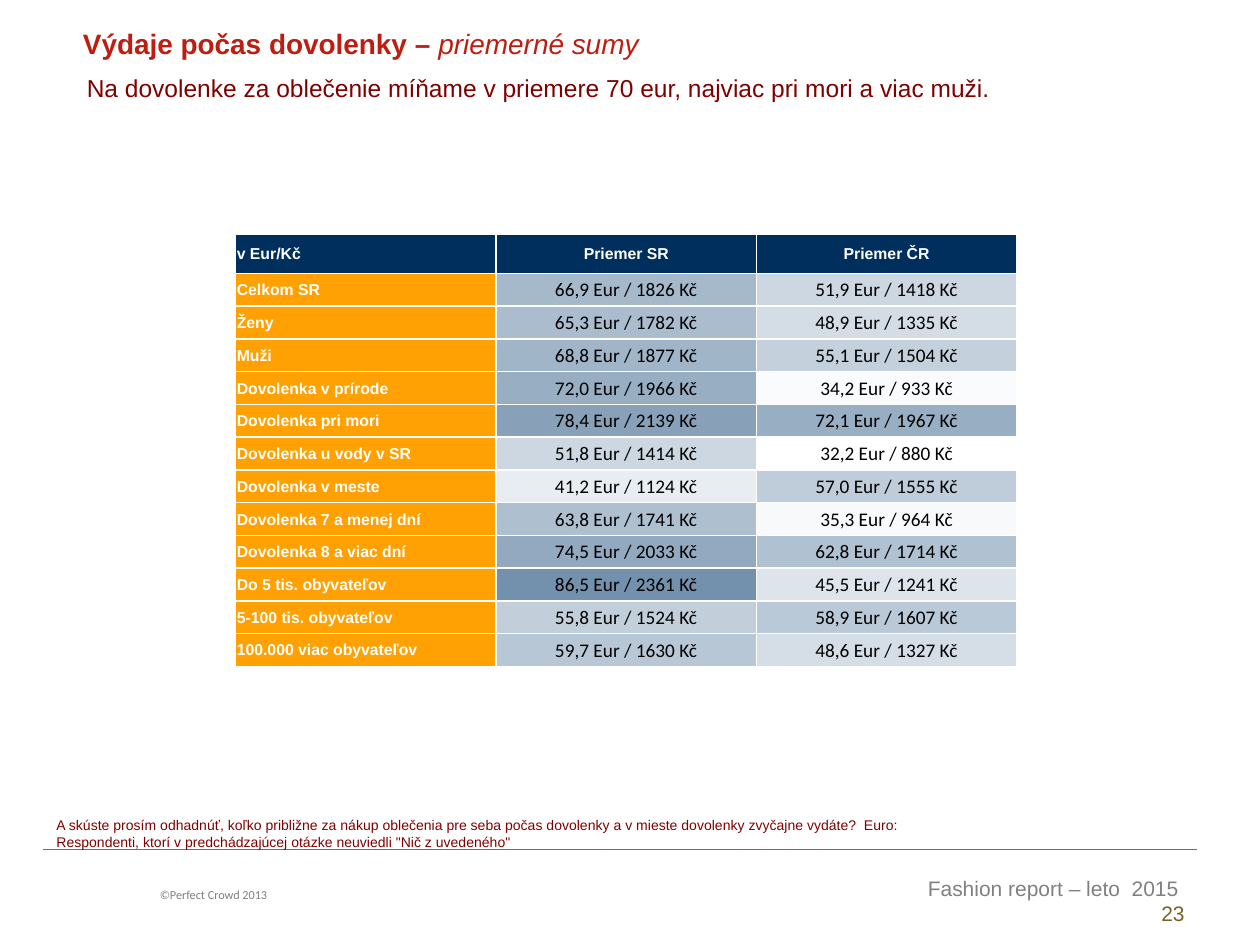
from dataclasses import dataclass

from lxml.etree import SubElement
from pptx import Presentation
from pptx.dml.color import RGBColor
from pptx.enum.shapes import MSO_CONNECTOR as Connector
from pptx.enum.text import MSO_ANCHOR as Anchor, PP_ALIGN as Align
from pptx.oxml.ns import qn
from pptx.util import Inches, Pt


@dataclass(frozen=True)
class Theme:
    heading: str = "BE1E11"
    body: str = "800000"
    muted: str = "808080"
    page: str = "756522"
    rule: str = "BF4C48"
    header: str = "002F5E"
    label: str = "FFA102"
    low: str = "FFFFFF"
    high: str = "7391AD"
    white: str = "FFFFFF"
    black: str = "000000"
    sans: str = "Arial"
    figures: str = "Calibri"
    title_size: int = 16
    message_size: int = 14
    footer_size: int = 12
    value_size: int = 11
    label_size: int = 9
    note_size: int = 8
    copyright_size: int = 7


THEME = Theme()
SLIDE_WIDTH, SLIDE_HEIGHT = Inches(10), Inches(7.5)
GRID_COLUMNS, GRID_ROWS = 100, 75

HEADINGS = ["v Eur/Kč", "Priemer SR", "Priemer ČR"]
# Group, then (euros, crowns) for SR and for ČR
SPENDING = [
    ("Celkom SR", (66.9, 1826), (51.9, 1418)),
    ("Ženy", (65.3, 1782), (48.9, 1335)),
    ("Muži", (68.8, 1877), (55.1, 1504)),
    ("Dovolenka v prírode", (72.0, 1966), (34.2, 933)),
    ("Dovolenka pri mori", (78.4, 2139), (72.1, 1967)),
    ("Dovolenka u vody v SR", (51.8, 1414), (32.2, 880)),
    ("Dovolenka v meste", (41.2, 1124), (57.0, 1555)),
    ("Dovolenka 7 a menej dní", (63.8, 1741), (35.3, 964)),
    ("Dovolenka 8 a viac dní", (74.5, 2033), (62.8, 1714)),
    ("Do 5 tis. obyvateľov", (86.5, 2361), (45.5, 1241)),
    ("5-100 tis. obyvateľov", (55.8, 1524), (58.9, 1607)),
    ("100.000 viac obyvateľov", (59.7, 1630), (48.6, 1327)),
]


def across(columns):
    return round(SLIDE_WIDTH * columns / GRID_COLUMNS)


def down(rows):
    return round(SLIDE_HEIGHT * rows / GRID_ROWS)


def area(left, top, width, height):
    return across(left), down(top), across(width), down(height)


def write(paragraph, text, *, size, color, font=THEME.sans, bold=False,
          italic=False, align=Align.LEFT):
    """Add one formatted run to a paragraph."""
    paragraph.alignment = align
    run = paragraph.add_run()
    run.text = text
    run.font.name = font
    run.font.size = Pt(size)
    run.font.bold = bold
    run.font.italic = italic
    run.font.color.rgb = RGBColor.from_string(color)


def add_text_frame(slide, *place):
    frame = slide.shapes.add_textbox(*area(*place)).text_frame
    frame.word_wrap = True
    return frame


def add_heading(slide):
    title = add_text_frame(slide, 5.6, 1.6, 75.1, 3.7).paragraphs[0]
    style = dict(size=THEME.title_size, color=THEME.heading)
    write(title, "Výdaje počas dovolenky – ", bold=True, **style)
    write(title, "priemerné sumy", italic=True, **style)

    message = add_text_frame(slide, 5.9, 5.3, 89.8, 8.1).paragraphs[0]
    write(message, "Na dovolenke za oblečenie míňame v priemere 70 eur, "
          "najviac pri mori a viac muži.", size=THEME.message_size,
          color=THEME.body, align=Align.JUSTIFY)


def add_question(slide):
    frame = add_text_frame(slide, 3.5, 64.3, 90.6, 3.7)
    style = dict(size=THEME.note_size, color=THEME.body)
    write(frame.paragraphs[0], "A skúste prosím odhadnúť, koľko približne za "
          "nákup oblečenia pre seba počas dovolenky a v mieste dovolenky "
          "zvyčajne vydáte?  Euro:", **style)
    write(frame.add_paragraph(), "Respondenti, ktorí v predchádzajúcej otázke "
          'neuviedli "Nič z uvedeného"', **style)


def add_footer(slide):
    rule = slide.shapes.add_connector(Connector.STRAIGHT, across(3.4),
                                      down(67.4), across(95), down(67.4))
    rule.line.color.rgb = RGBColor.from_string(THEME.rule)
    rule.line.width = Pt(0.75)
    SubElement(rule._element.spPr, qn("a:effectLst"))

    rights = add_text_frame(slide, 11.7, 69.9, 29.1, 2.2).paragraphs[0]
    write(rights, "©Perfect Crowd 2013", size=THEME.copyright_size,
          color=THEME.muted, font=THEME.figures)

    report = add_text_frame(slide, 57.9, 69, 37.1, 5).paragraphs[0]
    style = dict(size=THEME.footer_size, align=Align.RIGHT)
    write(report, "Fashion report – leto  2015 ", color=THEME.muted, **style)
    report.add_line_break()
    write(report, "23", color=THEME.page, **style)


def heat_color(value, lowest, highest):
    """Blend the low and high colours by where value lies in the range."""
    share = (value - lowest) / (highest - lowest)
    ends = zip(RGBColor.from_string(THEME.low), RGBColor.from_string(THEME.high))
    return str(RGBColor(*(round(a + (b - a) * share) for a, b in ends)))


def add_borders(cell):
    properties = cell._tc.get_or_add_tcPr()
    for side in ("lnL", "lnR", "lnT", "lnB"):
        border = SubElement(properties, qn(f"a:{side}"), w=str(Pt(1)))
        fill = SubElement(border, qn("a:solidFill"))
        SubElement(fill, qn("a:srgbClr"), val=THEME.white)


def fill_cell(cell, text, background, **style):
    cell.margin_left = cell.margin_top = cell.margin_right = Inches(0.01)
    cell.margin_bottom = 0
    cell.vertical_anchor = Anchor.MIDDLE
    add_borders(cell)
    cell.fill.solid()
    cell.fill.fore_color.rgb = RGBColor.from_string(background)
    write(cell.text_frame.paragraphs[0], text, **style)


def add_spending_table(slide):
    table = slide.shapes.add_table(len(SPENDING) + 1, len(HEADINGS),
                                   *area(18.7, 18.6, 62, 34.4)).table
    table.first_row = table.horz_banding = False
    for column in table.columns:
        column.width = across(62 / len(HEADINGS))
    for number, row in enumerate(table.rows):
        row.height = down(2.6 if number else 3.1)

    label_style = dict(size=THEME.label_size, color=THEME.white, bold=True)
    value_style = dict(size=THEME.value_size, color=THEME.black,
                       font=THEME.figures, align=Align.CENTER)
    for column, heading in enumerate(HEADINGS):
        fill_cell(table.cell(0, column), heading, THEME.header,
                  align=Align.CENTER if column else Align.LEFT, **label_style)

    euros_shown = [euros for _, *sums in SPENDING for euros, _ in sums]
    lowest, highest = min(euros_shown), max(euros_shown)
    for row, (group, *sums) in enumerate(SPENDING, start=1):
        fill_cell(table.cell(row, 0), group, THEME.label, **label_style)
        for column, (euros, crowns) in enumerate(sums, start=1):
            amount = f"{euros:.1f} Eur / {crowns} Kč".replace(".", ",")
            fill_cell(table.cell(row, column), amount,
                      heat_color(euros, lowest, highest), **value_style)


def main():
    deck = Presentation()
    deck.slide_width, deck.slide_height = SLIDE_WIDTH, SLIDE_HEIGHT
    slide = deck.slides.add_slide(deck.slide_layouts[6])
    add_footer(slide)
    add_heading(slide)
    add_question(slide)
    add_spending_table(slide)
    deck.save("out.pptx")


if __name__ == "__main__":
    main()
